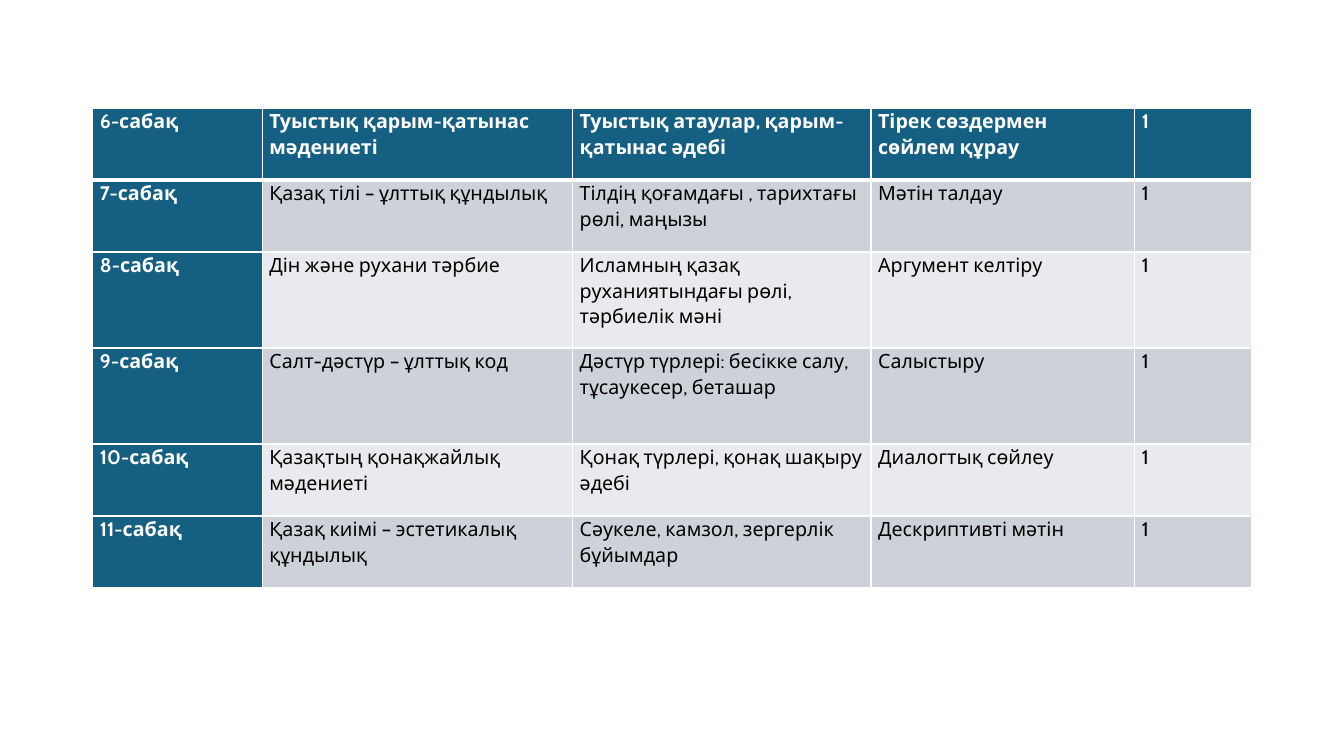
from lxml.etree import SubElement
from pptx import Presentation
from pptx.dml.color import RGBColor
from pptx.oxml.ns import qn
from pptx.util import Cm, Pt

WHITE = RGBColor(0xFF, 0xFF, 0xFF)
BLACK = RGBColor(0x00, 0x00, 0x00)
TEAL = RGBColor(0x15, 0x60, 0x82)
BANDS = (RGBColor(0xE8, 0xEA, 0xED), RGBColor(0xCC, 0xD2, 0xD8))

COLUMN_WIDTHS = (4.27, 7.82, 7.52, 6.65, 2.95)
ROW_HEIGHTS = (1.81, 1.81, 2.42, 2.42, 1.81, 1.81)
LESSONS = (
    ("6-сабақ", "Туыстық қарым-қатынас мәдениеті",
     "Туыстық атаулар, қарым-қатынас әдебі", "Тірек сөздермен сөйлем құрау", "1"),
    ("7-сабақ", "Қазақ тілі – ұлттық құндылық",
     "Тілдің қоғамдағы , тарихтағы рөлі, маңызы", "Мәтін талдау", "1"),
    ("8-сабақ", "Дін және рухани тәрбие",
     "Исламның қазақ руханиятындағы рөлі, тәрбиелік мәні", "Аргумент келтіру", "1"),
    ("9-сабақ", "Салт-дәстүр – ұлттық код",
     "Дәстүр түрлері: бесікке салу, тұсаукесер, беташар", "Салыстыру", "1"),
    ("10-сабақ", "Қазақтың қонақжайлық мәдениеті",
     "Қонақ түрлері, қонақ шақыру әдебі", "Диалогтық сөйлеу", "1"),
    ("11-сабақ", "Қазақ киімі – эстетикалық құндылық",
     "Сәукеле, камзол, зергерлік бұйымдар", "Дескриптивті мәтін", "1"),
)


class LessonSlide:
    """Holds the text style and the slide being built."""

    def __init__(self, s, font="Cabin", size=14):
        self.s = s
        self.font = font
        self.size = size

    def table(self, left, top, rows, widths, heights):
        frame = self.s.shapes.add_table(
            len(rows), len(widths), Cm(left), Cm(top),
            Cm(sum(widths)), Cm(sum(heights)))
        table = frame.table
        for column, width in zip(table.columns, widths):
            column.width = Cm(width)
        for row, height in zip(table.rows, heights):
            row.height = Cm(height)
        for i, texts in enumerate(rows):
            for j, text in enumerate(texts):
                cell = table.cell(i, j)
                heading = i == 0 or j == 0
                # A thick line separates the first row from the rest
                self.borders(cell, top=3 if i == 1 else 1, bottom=3 if i == 0 else 1)
                cell.fill.solid()
                cell.fill.fore_color.rgb = TEAL if heading else BANDS[i % 2]
                self.cell_text(cell, text, heading)

    def borders(self, cell, top, bottom):
        tcPr = cell._tc.get_or_add_tcPr()
        for side, width in (("L", 1), ("R", 1), ("T", top), ("B", bottom)):
            ln = SubElement(tcPr, qn(f"a:ln{side}"), w=str(Pt(width)))
            fill = SubElement(ln, qn("a:solidFill"))
            SubElement(fill, qn("a:srgbClr"), val=str(WHITE))

    def cell_text(self, cell, text, heading):
        cell.margin_left = cell.margin_right = Cm(0.18)
        cell.margin_top = cell.margin_bottom = 0
        cell.text_frame.text = text
        p = cell.text_frame.paragraphs[0]
        p.line_spacing = 1.07
        p.space_after = Pt(8)
        font = p.runs[0].font
        font.name = self.font
        font.size = Pt(self.size)
        font.bold = heading
        font.color.rgb = WHITE if heading else BLACK


def main():
    prs = Presentation()
    prs.slide_width, prs.slide_height = Cm(33.87), Cm(19.05)
    slide = LessonSlide(prs.slides.add_slide(prs.slide_layouts[6]))

    # Lesson plan table
    slide.table(2.34, 2.73, LESSONS, COLUMN_WIDTHS, ROW_HEIGHTS)

    prs.save("out.pptx")


if __name__ == "__main__":
    main()
